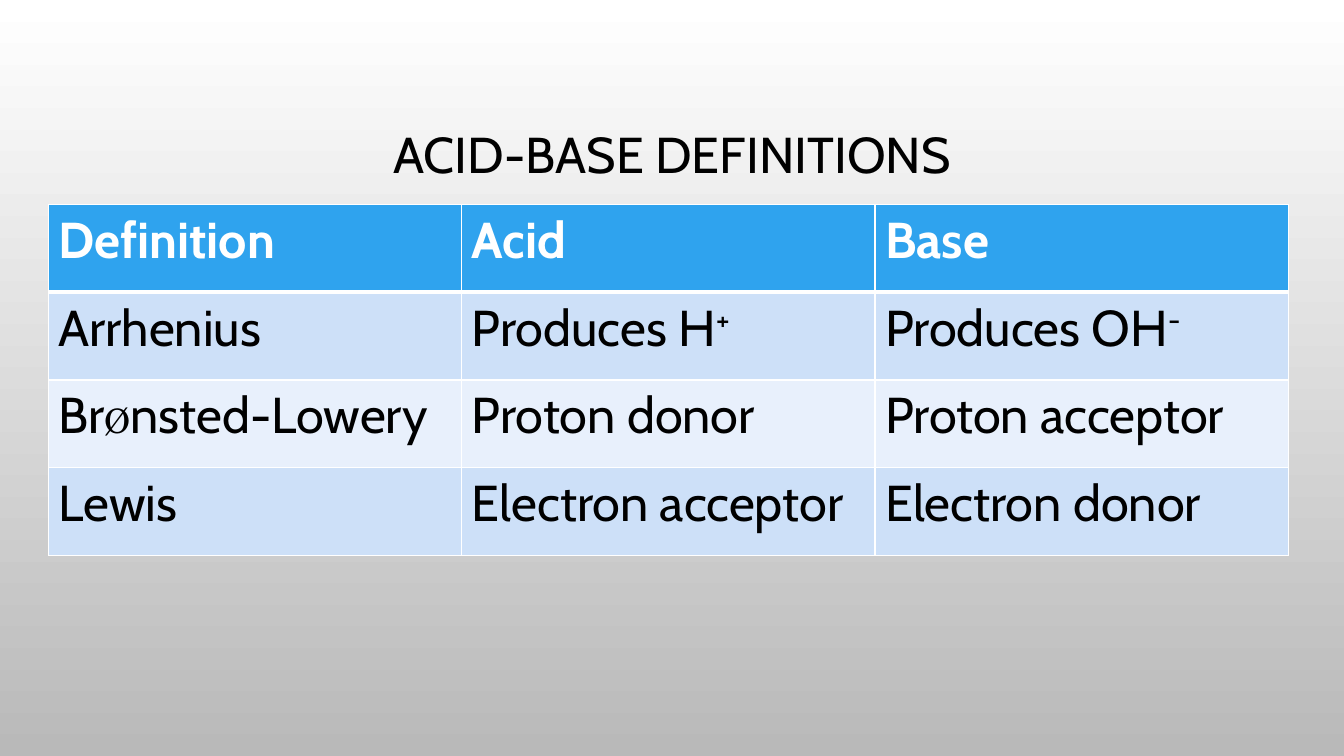
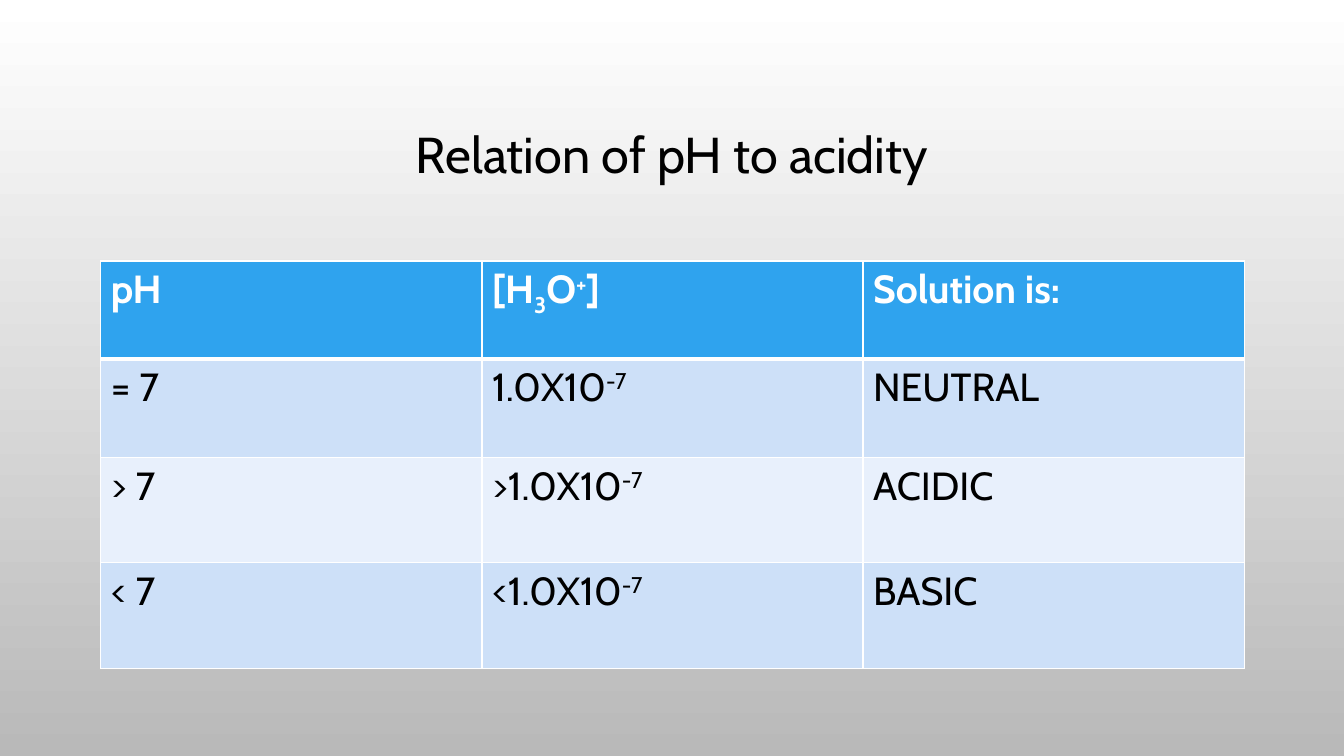
from lxml.etree import SubElement
from pptx import Presentation
from pptx.dml.color import RGBColor
from pptx.enum.text import MSO_ANCHOR, PP_ALIGN
from pptx.oxml.ns import qn
from pptx.util import Inches, Pt

BLACK = RGBColor(0x00, 0x00, 0x00)
WHITE = RGBColor(0xFF, 0xFF, 0xFF)
GREY = RGBColor(0xB9, 0xB9, 0xB9)
HEADER_BLUE = RGBColor(0x2F, 0xA3, 0xEE)
BANDS = (RGBColor(0xCD, 0xE0, 0xF8), RGBColor(0xE8, 0xF0, 0xFC))

FONT = "Cabin"
SYMBOL_FONT = "TeX Gyre Schola"
TITLE_AREA = (1, 0.68, 11.33, 1.75)
THIN, THICK = 1, 3

# A cell is a string or a tuple of pieces: "^" raises a piece, "_" lowers it.
SLIDES = [
    dict(
        title="ACID-BASE DEFINITIONS",
        left=0.48, top=2.03, column=4.1, heights=[0.87] * 4, size=36,
        rows=[
            ("Definition", "Acid", "Base"),
            ("Arrhenius", ("Produces H", "^+"), ("Produces OH", "^-")),
            (("Br", "Ø", "nsted-Lowery"), "Proton donor", "Proton acceptor"),
            ("Lewis", "Electron acceptor", "Electron donor"),
        ],
    ),
    dict(
        title="Relation of pH to acidity",
        left=1, top=2.59, column=3.78, heights=[0.97, 0.98, 1.04, 1.05], size=28,
        rows=[
            ("pH", ("[H", "_3", "O", "^+", "]"), "Solution is:"),
            ("= 7", ("1.0X10", "^-7"), "NEUTRAL"),
            ("> 7", (">1.0X10", "^-7"), "ACIDIC"),
            ("< 7", ("<1.0X10", "^-7"), "BASIC"),
        ],
    ),
]

BASELINES = {"^": "30000", "_": "-25000"}


def write(frame, content, size=36, color=BLACK, bold=False, align=None, spacing=None):
    """Fill the frame's first paragraph with a string or a tuple of pieces."""
    para = frame.paragraphs[0]
    para.alignment = align
    para.line_spacing = spacing
    for piece in (content,) if isinstance(content, str) else content:
        span = para.add_run()
        baseline = BASELINES.get(piece[0])
        span.text = piece[1:] if baseline else piece
        symbol = piece == "Ø"
        span.font.name = SYMBOL_FONT if symbol else FONT
        span.font.size = Pt(24 if symbol else size)
        span.font.bold = bold
        span.font.color.rgb = color
        if baseline:
            span.font._element.set("baseline", baseline)


def add_borders(cell, top, bottom):
    properties = cell._tc.get_or_add_tcPr()
    for side, width in (("L", THIN), ("R", THIN), ("T", top), ("B", bottom)):
        line = SubElement(properties, qn(f"a:ln{side}"), w=str(Pt(width)))
        fill = SubElement(line, qn("a:solidFill"))
        SubElement(fill, qn("a:srgbClr"), val=str(WHITE))


def add_title(page, text):
    box = page.shapes.add_textbox(*map(Inches, TITLE_AREA))
    frame = box.text_frame
    frame.word_wrap = True
    frame.vertical_anchor = MSO_ANCHOR.MIDDLE
    write(frame, text, align=PP_ALIGN.CENTER, spacing=0.9)


def add_grid(page, rows, left, top, column, heights, size):
    count = len(rows[0])
    area = (left, top, column * count, sum(heights))
    table = page.shapes.add_table(len(rows), count, *map(Inches, area)).table
    table.horz_banding = False
    for table_column in table.columns:
        table_column.width = Inches(column)
    for index, (row, height) in enumerate(zip(rows, heights)):
        table.rows[index].height = Inches(height)
        header = index == 0
        for position, content in enumerate(row):
            cell = table.cell(index, position)
            add_borders(cell, THICK if index == 1 else THIN, THICK if header else THIN)
            cell.fill.solid()
            cell.fill.fore_color.rgb = HEADER_BLUE if header else BANDS[(index - 1) % 2]
            write(cell.text_frame, content, size=size, bold=header,
                  color=WHITE if header else BLACK)


def set_background(master):
    fill = master.background.fill
    fill.gradient()
    fill.gradient_angle = 270
    for stop, color in zip(fill.gradient_stops, (WHITE, GREY)):
        stop.color.rgb = color


def main():
    deck = Presentation()
    deck.slide_width, deck.slide_height = Inches(13.33), Inches(7.5)
    set_background(deck.slide_master)
    for slide in SLIDES:
        page = deck.slides.add_slide(deck.slide_layouts[6])
        add_title(page, slide["title"])
        add_grid(page, **{key: value for key, value in slide.items() if key != "title"})
    deck.save("out.pptx")


if __name__ == "__main__":
    main()
